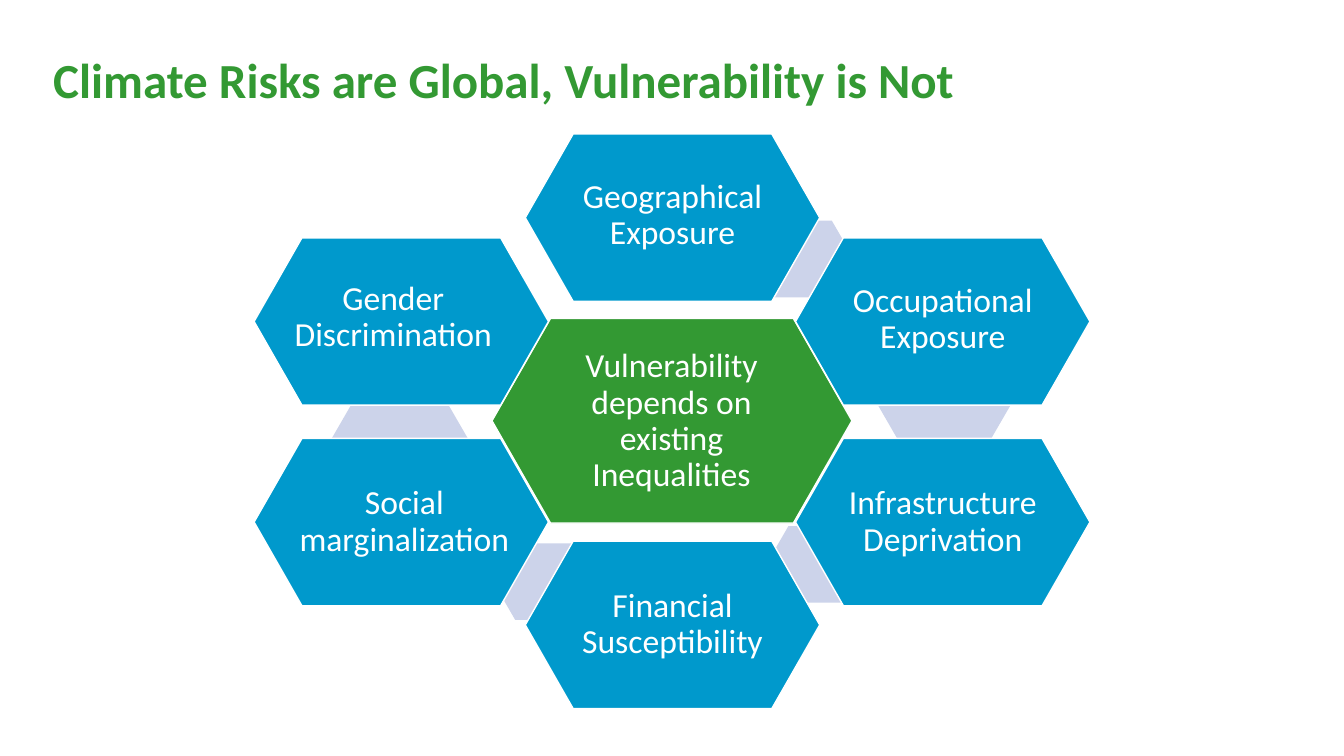
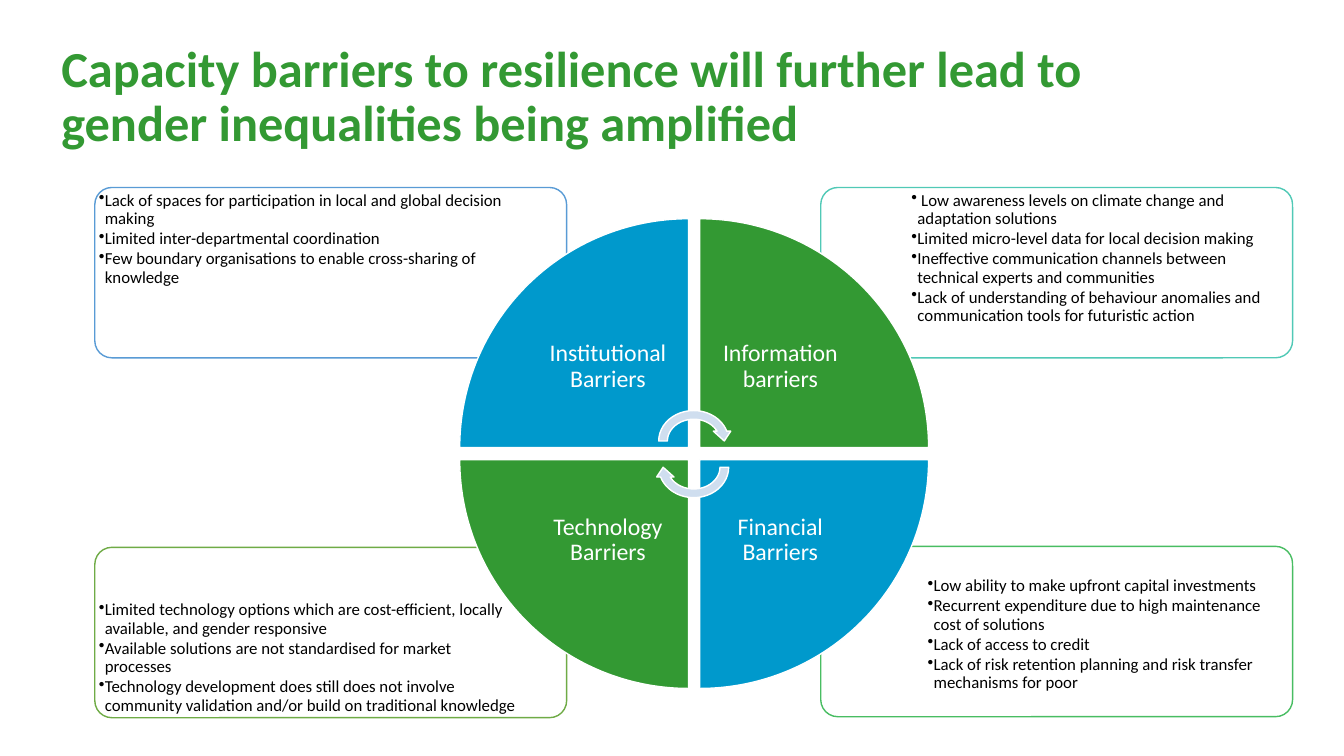
from dataclasses import dataclass

from lxml.etree import SubElement
from pptx import Presentation
from pptx.dml.color import RGBColor
from pptx.enum.shapes import MSO_SHAPE
from pptx.enum.text import MSO_ANCHOR, PP_ALIGN
from pptx.oxml.ns import qn
from pptx.util import Inches, Pt


@dataclass(frozen=True)
class Theme:
    font: str = "Calibri"
    green: str = "339933"
    blue: str = "0099CC"
    white: str = "FFFFFF"
    black: str = "000000"
    link: str = "CCD3EA"
    arrow: str = "CFDEEF"
    hexagon_size: int = 24
    wedge_size: int = 17
    bullet_size: int = 12
    line_spacing: float = 0.9
    bullet_gap: float = 1.6


THEME = Theme()

HEXAGON_WIDTH, HEXAGON_HEIGHT = 2.92, 1.66
OUTER_HEXAGONS = [
    ("Geographical Exposure", 5.21, 1.33, 0, -0.02),
    ("Occupational Exposure", 7.89, 2.36, 0, -0.02),
    ("Infrastructure Deprivation", 7.89, 4.35, 0, 0),
    ("Financial Susceptibility", 5.21, 5.37, 0, 0),
    ("Social marginalization", 2.52, 4.35, 0.03, 0),
    ("Gender Discrimination", 2.52, 2.36, -0.08, -0.04),
]
LINKS = [(7.12, 2.19), (8.69, 3.61), (7.6, 5.22), (4.89, 5.39), (3.29, 3.97)]

PANELS = [
    (8.14, 5.42, "48BD62", (9.2, 5.88, 3.59, 0.99), MSO_ANCHOR.BOTTOM, [
        "Low ability to make upfront capital investments",
        "Recurrent expenditure due to high maintenance cost of solutions",
        "Lack of access to credit",
        "Lack of risk retention planning and risk transfer mechanisms for poor",
    ]),
    (0.94, 5.43, "6FAB46", (0.98, 5.47, 4.15, 1.62), MSO_ANCHOR.BOTTOM, [
        "Limited technology options which are cost-efficient, locally available, "
        "and gender responsive",
        "Available solutions are not standardised for market processes",
        "Technology development does still does not involve community validation "
        "and/or build on traditional knowledge",
    ]),
    (8.14, 1.86, "50C9B6", (9.04, 1.9, 3.74, 1.19), MSO_ANCHOR.TOP, [
        " Low awareness levels on climate change and adaptation solutions",
        "Limited micro-level data for local decision making",
        "Ineffective communication channels between technical experts and communities",
        "Lack of understanding of behaviour anomalies and communication tools "
        "for futuristic action",
    ]),
    (0.94, 1.86, "599BD5", (0.98, 1.9, 4.22, 1.19), MSO_ANCHOR.TOP, [
        "Lack of spaces for participation in local and global decision making",
        "Limited inter-departmental coordination",
        "Few boundary organisations to enable cross-sharing of knowledge",
    ]),
]

WEDGE_SIDE = 2.27
WEDGES = [
    ("Institutional Barriers", 4.56, 2.17, 5.23, 2.83, THEME.blue),
    ("Information barriers", 6.94, 2.17, 6.94, 2.83, THEME.green),
    ("Financial Barriers", 6.94, 4.56, 6.94, 4.55, THEME.blue),
    ("Technology Barriers", 4.56, 4.56, 5.23, 4.55, THEME.green),
]


def add_figure(slide, preset, box, fill, line=None, adjustment=None, rotation=0):
    shape = slide.shapes.add_shape(preset, *map(Inches, box))
    shape.shadow.inherit = False
    shape.rotation = rotation
    shape.fill.solid()
    shape.fill.fore_color.rgb = RGBColor.from_string(fill)
    if line:
        shape.line.color.rgb = RGBColor.from_string(line)
        shape.line.width = Pt(1)
    else:
        shape.line.fill.background()
    if adjustment is not None:
        shape.adjustments[0] = adjustment


def add_bullet(paragraph):
    paragraph.level = 1
    properties = paragraph._p.get_or_add_pPr()
    properties.set("marL", str(Inches(0.06)))
    properties.set("indent", str(Inches(-0.08)))
    SubElement(properties, qn("a:buChar")).set("char", "•")


def add_text(slide, box, texts, size, color, align=PP_ALIGN.LEFT,
             anchor=MSO_ANCHOR.MIDDLE, inset=(0, 0), bold=False, bullets=False):
    frame = slide.shapes.add_textbox(*map(Inches, box)).text_frame
    frame.word_wrap = True
    frame.vertical_anchor = anchor
    frame.margin_left = frame.margin_right = Inches(inset[0])
    frame.margin_top = frame.margin_bottom = Inches(inset[1])
    for index, text in enumerate(texts):
        paragraph = frame.add_paragraph() if index else frame.paragraphs[0]
        if bullets:
            add_bullet(paragraph)
        paragraph.alignment = align
        paragraph.line_spacing = THEME.line_spacing
        if index:
            paragraph.space_before = Pt(THEME.bullet_gap)
        run = paragraph.add_run()
        run.text = text
        run.font.name = THEME.font
        run.font.size = Pt(size)
        run.font.bold = bold
        run.font.color.rgb = RGBColor.from_string(color)


def add_title(slide, box, text, size):
    add_text(slide, box, [text], size, THEME.green, inset=(0.1, 0.05), bold=True)


def add_label(slide, box, text, size, inset):
    add_text(slide, box, [text], size, THEME.white, PP_ALIGN.CENTER, inset=(inset, inset))


def add_hexagon(slide, box, text, fill, label_box):
    add_figure(slide, MSO_SHAPE.HEXAGON, box, fill, THEME.white, 0.286)
    add_label(slide, label_box, text, THEME.hexagon_size, 0.03)


def add_outer_hexagon(slide, text, left, top, shift_x, shift_y):
    label_width, label_height = 2.32, 1.1
    label_left = left + (HEXAGON_WIDTH - label_width) / 2 + shift_x
    label_top = top + (HEXAGON_HEIGHT - label_height) / 2 + shift_y
    add_hexagon(slide, (left, top, HEXAGON_WIDTH, HEXAGON_HEIGHT), text, THEME.blue,
                (label_left, label_top, label_width, label_height))


def add_panel(slide, left, top, line, text_box, anchor, texts):
    add_figure(slide, MSO_SHAPE.ROUNDED_RECTANGLE, (left, top, 4.68, 1.69),
               THEME.white, line, 0.1)
    add_text(slide, text_box, texts, THEME.bullet_size, THEME.black,
             anchor=anchor, bullets=True)


def build_vulnerability_slide(slide):
    add_title(slide, (0.43, 0.49, 11.8, 0.65),
              "Climate Risks are Global, Vulnerability is Not", 35)
    for left, top in LINKS:
        add_figure(slide, MSO_SHAPE.HEXAGON, (left, top, 1.35, 0.76), THEME.link,
                   adjustment=0.289)
    add_hexagon(slide, (4.88, 3.16, 3.57, 2.03),
                "Vulnerability depends on existing Inequalities", THEME.green,
                (5.47, 3.5, 2.38, 1.36))
    for hexagon in OUTER_HEXAGONS:
        add_outer_hexagon(slide, *hexagon)


def build_barriers_slide(slide):
    add_title(slide, (0.51, 0.4, 11.64, 1.15),
              "Capacity barriers to resilience will further lead to "
              "gender inequalities being amplified", 36)
    for panel in PANELS:
        add_panel(slide, *panel)
    for index, (text, left, top, label_left, label_top, fill) in enumerate(WEDGES):
        add_figure(slide, MSO_SHAPE.PIE_WEDGE, (left, top, WEDGE_SIDE, WEDGE_SIDE),
                   fill, THEME.white, rotation=90 * index)
        add_label(slide, (label_left, label_top, 1.6, 1.62), text,
                  THEME.wedge_size, 0.13)
    for top, rotation in [(4.03, 0), (4.29, 180)]:
        add_figure(slide, MSO_SHAPE.CIRCULAR_ARROW, (6.49, top, 0.78, 0.69),
                   THEME.arrow, THEME.white, rotation=rotation)


def main():
    presentation = Presentation()
    presentation.slide_width = Inches(13.33)
    presentation.slide_height = Inches(7.5)
    blank_layout = presentation.slide_layouts[6]
    for build_slide in (build_vulnerability_slide, build_barriers_slide):
        build_slide(presentation.slides.add_slide(blank_layout))
    presentation.save("out.pptx")


if __name__ == "__main__":
    main()
